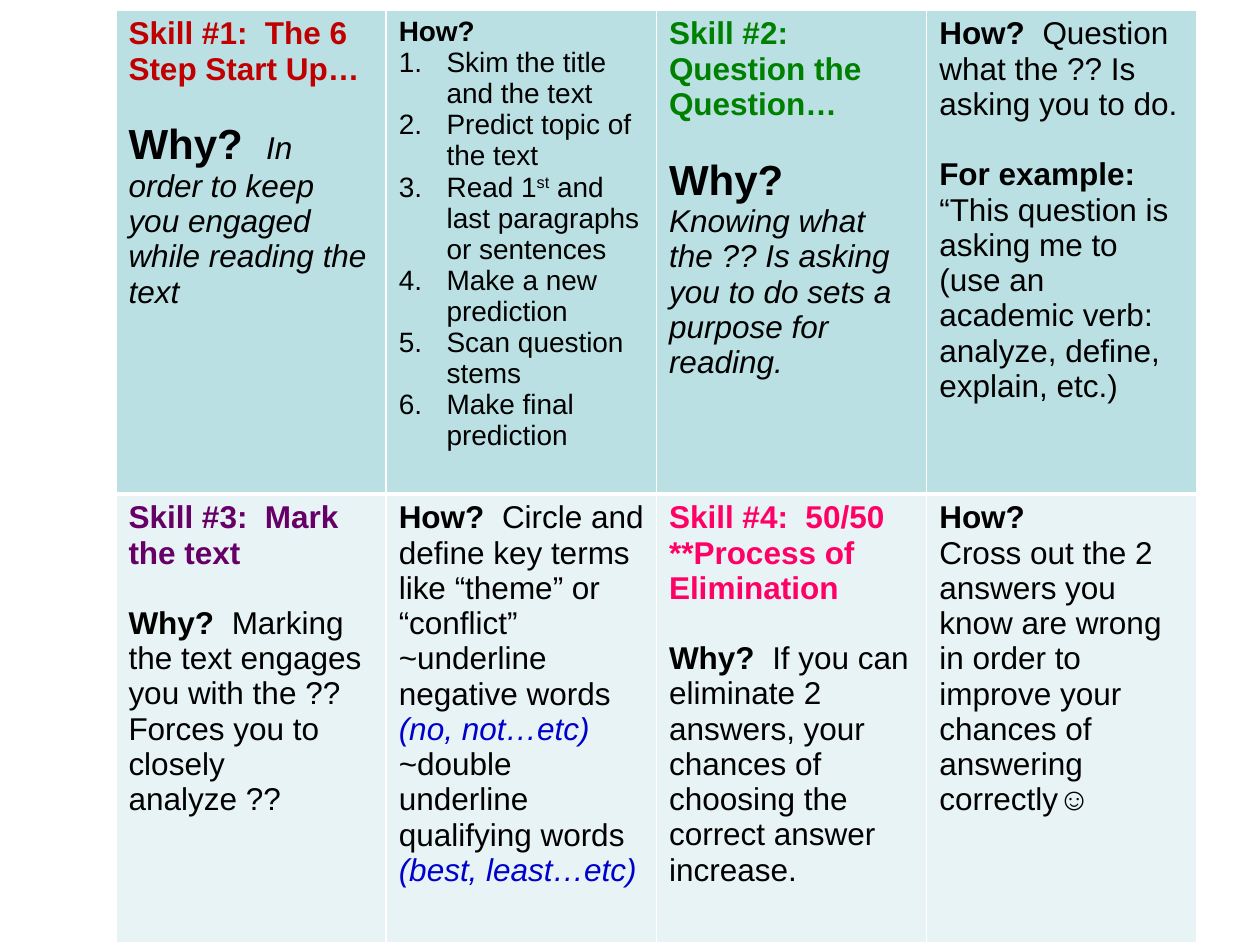
from lxml import etree
from pptx import Presentation
from pptx.dml.color import RGBColor
from pptx.oxml.ns import qn
from pptx.util import Emu, Inches, Pt

COLORS = {
    "black": "000000", "white": "FFFFFF", "red": "C00000", "green": "008000",
    "purple": "660066", "pink": "FF0066", "blue": "0000CC",
    "teal": "BBE0E3", "pale": "E7F3F4",
}
FONT = "Arial"
BODY, LIST, LARGE = 18, 16, 24
GAP = Pt(20)
INDENT = Inches(0.38)

# A run is (text, marks, colour, size); marks: b bold, i italic, ^ superscript.
# A paragraph is (kind, runs); kind: "" plain, "gap" spaced, "num" numbered.


def run(text, marks="", color="black", size=BODY):
    return text, marks, color, size


def steps(*items):
    return [("num", [run(t, m, size=LIST) for t, m in item]) for item in items]


CELLS = [
    [
        [("", [run("Skill #1:  The 6 Step Start Up…", "b", "red")]),
         ("gap", [run("Why?  ", "b", size=LARGE),
                  run("In order to keep you engaged while reading the text", "i")])],
        [("", [run("How?", "b", size=LIST)])] + steps(
            [("Skim the title and the text", "")],
            [("Predict topic of the text", "")],
            [("Read 1", ""), ("st", "^"), (" and last paragraphs or sentences", "")],
            [("Make a new prediction", "")],
            [("Scan question stems", "")],
            [("Make final prediction", "")]),
        [("", [run("Skill #2:  Question the Question…", "b", "green")]),
         ("gap", [run("Why?  ", "b", size=LARGE),
                  run("Knowing what the ?? Is asking you to do sets a purpose "
                      "for reading.", "i")])],
        [("", [run("How?  ", "b"), run("Question what the ?? Is asking you to do.")]),
         ("gap", [run("For example:  ", "b"),
                  run("“This question is asking me to (use an academic verb:  "
                      "analyze, define, explain, etc.)")])],
    ],
    [
        [("", [run("Skill #3:  Mark the text", "b", "purple")]),
         ("gap", [run("Why?  ", "b"),
                  run("Marking the text engages you with the ?? Forces you to "
                      "closely analyze ??")])],
        [("", [run("How?  ", "b"),
               run("Circle and define key terms like “theme” or “conflict”")]),
         ("", [run("~underline negative words "), run("(no, not…etc)", "i", "blue")]),
         ("", [run("~double underline qualifying words "),
               run("(best, least…etc)", "i", "blue")])],
        [("", [run("Skill #4:  50/50", "b", "pink")]),
         ("", [run("**Process of Elimination", "b", "pink")]),
         ("gap", [run("Why?  ", "b"),
                  run("If you can eliminate 2 answers, your chances of choosing "
                      "the correct answer increase.")])],
        [("", [run("How?", "b")]),
         ("", [run("Cross out the 2 answers you know are wrong in order to "
                   "improve your chances of answering correctly☺")])],
    ],
]
ROW_HEIGHTS = [3.84, 3.56]
ROW_FILLS = ["teal", "pale"]
LEFT, TOP, COL_WIDTH = 0.92, 0.08, 2.145
RULE, HEAVY_RULE = 1, 3


def rgb(name):
    return RGBColor.from_string(COLORS[name])


def set_borders(cell, widths):
    tcPr = cell._tc.get_or_add_tcPr()
    for pos, (side, width) in enumerate(widths.items()):
        ln = etree.Element(qn(f"a:ln{side}"), w=str(Pt(width)))
        fill = etree.SubElement(ln, qn("a:solidFill"))
        etree.SubElement(fill, qn("a:srgbClr"), val=COLORS["white"])
        tcPr.insert(pos, ln)


def number(p):
    pPr = p._p.get_or_add_pPr()
    pPr.set("marL", str(INDENT))
    pPr.set("indent", str(-INDENT))
    etree.SubElement(pPr, qn("a:buFont"), typeface=FONT)
    etree.SubElement(pPr, qn("a:buAutoNum"), type="arabicPeriod")


def write(tf, paragraphs):
    for i, (kind, runs) in enumerate(paragraphs):
        p = tf.add_paragraph() if i else tf.paragraphs[0]
        if kind == "gap":
            p.space_before = GAP
        elif kind == "num":
            number(p)
        for text, marks, color, size in runs:
            r = p.add_run()
            r.text = text
            font = r.font
            font.name, font.size = FONT, Pt(size)
            font.bold, font.italic = "b" in marks, "i" in marks
            font.color.rgb = rgb(color)
            if "^" in marks:
                r._r.get_or_add_rPr().set("baseline", "30000")


def main():
    prs = Presentation()
    prs.slide_width, prs.slide_height = Inches(10), Inches(7.5)
    s = prs.slides.add_slide(prs.slide_layouts[6])
    n_rows, n_cols = len(CELLS), len(CELLS[0])
    table = s.shapes.add_table(
        n_rows, n_cols, Inches(LEFT), Inches(TOP),
        Inches(COL_WIDTH * n_cols), Inches(sum(ROW_HEIGHTS))).table
    table.first_row = table.horz_banding = False
    for col in table.columns:
        col.width = Emu(Inches(COL_WIDTH))
    for i, row in enumerate(CELLS):
        table.rows[i].height = Inches(ROW_HEIGHTS[i])
        top = HEAVY_RULE if i == 1 else RULE
        bottom = HEAVY_RULE if i == 0 else RULE
        for j, paragraphs in enumerate(row):
            cell = table.cell(i, j)
            cell.fill.solid()
            cell.fill.fore_color.rgb = rgb(ROW_FILLS[i])
            set_borders(cell, {"L": RULE, "R": RULE, "T": top, "B": bottom})
            write(cell.text_frame, paragraphs)
    prs.save("out.pptx")


if __name__ == "__main__":
    main()
